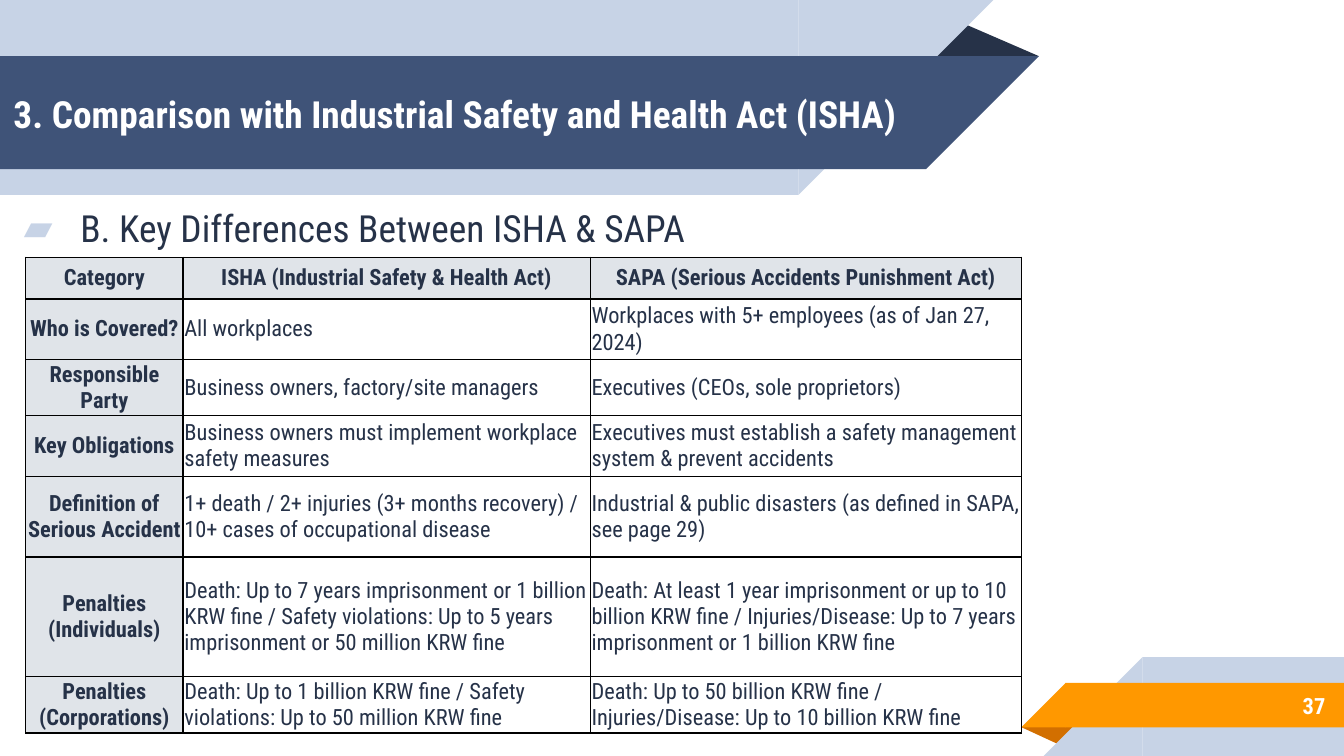
from dataclasses import dataclass

from lxml import etree
from pptx import Presentation
from pptx import util as u
from pptx.dml.color import RGBColor
from pptx.enum import shapes, text
from pptx.oxml.ns import qn

FONT = "Roboto Condensed"
INK, WHITE, PALE, NAVY = "263248", "FFFFFF", "C7D3E6", "3F5378"
ORANGE, RUST, HEADER_GREY, BLACK = "FF9800", "D26F00", "E0E4E9", "000000"

presentation = Presentation()
presentation.slide_width = u.Inches(10)
presentation.slide_height = presentation.slide_width * 9 // 16


@dataclass
class Box:
    """A frame in percent of the slide's width and height."""
    left: float
    top: float
    width: float
    height: float

    def frame(self) -> tuple[int, int, int, int]:
        across = presentation.slide_width / 100
        down = presentation.slide_height / 100
        return (round(self.left * across), round(self.top * down),
                round(self.width * across), round(self.height * down))


@dataclass
class Ribbon:
    """A band with a 45 degree end on its inner side."""
    body: Box
    colour: str
    hangs_from_left: bool


@dataclass
class Fold:
    box: Box
    colour: str
    rotation: int


@dataclass
class Row:
    height: float
    cells: tuple[str, str, str]


FOLDS = [Fold(Box(76, 96.2, 4.3, 2.4), RUST, 180),
         Fold(Box(68.8, 2.98, 8.5, 4.45), INK, 0)]
RIBBONS = [Ribbon(Box(85, 86.93, 15, 13.07), PALE, False),
           Ribbon(Box(79.3, 90.34, 20.7, 5.87), ORANGE, False),
           Ribbon(Box(0, 0, 59.4, 25.78), PALE, True),
           Ribbon(Box(0, 7.43, 68.9, 14.93), NAVY, True)]

TABLE_BOX = Box(1.92, 34.03, 74.1, 60.6)
COLUMN_WIDTHS = [1.17, 3.03, 3.21]
# The last row is as tall as its text.
ROWS = [
    Row(0.31, ("Category", "ISHA (Industrial Safety & Health Act)",
               "SAPA (Serious Accidents Punishment Act)")),
    Row(0.45, ("Who is Covered?", "All workplaces",
               "Workplaces with 5+ employees (as of Jan 27, 2024)")),
    Row(0.31, ("Responsible Party", "Business owners, factory/site managers",
               "Executives (CEOs, sole proprietors)")),
    Row(0.45, ("Key Obligations",
               "Business owners must implement workplace safety measures",
               "Executives must establish a safety management system & prevent accidents")),
    Row(0.6, ("Definition of Serious Accident",
              "1+ death / 2+ injuries (3+ months recovery) / 10+ cases of occupational disease",
              "Industrial & public disasters (as defined in SAPA, see page 29)")),
    Row(0.89, ("Penalties (Individuals)",
               "Death: Up to 7 years imprisonment or 1 billion KRW fine / "
               "Safety violations: Up to 5 years imprisonment or 50 million KRW fine",
               "Death: At least 1 year imprisonment or up to 10 billion KRW fine / "
               "Injuries/Disease: Up to 7 years imprisonment or 1 billion KRW fine")),
    Row(0, ("Penalties (Corporations)",
            "Death: Up to 1 billion KRW fine / Safety violations: Up to 50 million KRW fine",
            "Death: Up to 50 billion KRW fine / Injuries/Disease: Up to 10 billion KRW fine")),
]


def paint(fill, colour: str) -> None:
    fill.solid()
    fill.fore_color.rgb = RGBColor.from_string(colour)


def add_piece(slide, preset, frame: tuple[int, int, int, int], colour: str):
    shape = slide.shapes.add_shape(preset, *frame)
    shape.shadow.inherit = False
    paint(shape.fill, colour)
    shape.line.fill.background()
    return shape


def add_fold(slide, fold: Fold) -> None:
    shape = add_piece(slide, shapes.MSO_SHAPE.ISOSCELES_TRIANGLE,
                      fold.box.frame(), fold.colour)
    shape.adjustments[0] = 0.32
    shape.rotation = fold.rotation


def add_ribbon(slide, ribbon: Ribbon) -> None:
    left, top, width, height = ribbon.body.frame()
    add_piece(slide, shapes.MSO_SHAPE.RECTANGLE,
              (left, top, width, height), ribbon.colour)
    end_left = left + width if ribbon.hangs_from_left else left - height
    end = add_piece(slide, shapes.MSO_SHAPE.RIGHT_TRIANGLE,
                    (end_left, top, height, height), ribbon.colour)
    end._element.spPr.find(qn("a:xfrm")).set("flipH", "1")
    end.rotation = 180 if ribbon.hangs_from_left else 0


def write(text_frame, words: str, size: float, colour: str, bold: bool = False,
          align=text.PP_ALIGN.LEFT):
    text_frame.word_wrap = True
    text_frame.vertical_anchor = text.MSO_ANCHOR.MIDDLE
    text_frame.text = words
    paragraph = text_frame.paragraphs[0]
    paragraph.alignment = align
    font = paragraph.font
    font.name, font.size, font.bold = FONT, u.Pt(size), bold
    font.color.rgb = RGBColor.from_string(colour)
    return paragraph


def add_text(slide, box: Box, *style, **options):
    text_box = slide.shapes.add_textbox(*box.frame())
    frame = text_box.text_frame
    frame.margin_left = frame.margin_right = u.Inches(0.1)
    return write(frame, *style, **options)


def add_bullet(paragraph, mark: str, colour: str) -> None:
    properties = paragraph._p.get_or_add_pPr()
    properties.set("marL", str(u.Inches(0.5)))
    properties.set("indent", str(u.Inches(-0.42)))
    # Bullet marks come before the paragraph's default run properties.
    bullet_colour = etree.Element(qn("a:buClr"))
    etree.SubElement(bullet_colour, qn("a:srgbClr"), val=colour)
    bullet_font = etree.Element(qn("a:buFont"), typeface=FONT)
    bullet_mark = etree.Element(qn("a:buChar"), char=mark)
    for position, part in enumerate((bullet_colour, bullet_font, bullet_mark)):
        properties.insert(position, part)


def add_borders(cell, colour: str, points: float) -> None:
    properties = cell._tc.get_or_add_tcPr()
    for position, side in enumerate(("lnL", "lnR", "lnT", "lnB")):
        line = etree.Element(qn(f"a:{side}"), w=str(u.Pt(points)))
        fill = etree.SubElement(line, qn("a:solidFill"))
        etree.SubElement(fill, qn("a:srgbClr"), val=colour)
        properties.insert(position, line)


def add_comparison(slide, rows: list[Row]) -> None:
    table = slide.shapes.add_table(len(rows), len(COLUMN_WIDTHS), *TABLE_BOX.frame()).table
    table.first_row = table.horz_banding = False
    for column, width in zip(table.columns, COLUMN_WIDTHS):
        column.width = u.Inches(width)
    for row_index, row in enumerate(rows):
        table.rows[row_index].height = u.Inches(row.height)
        for column_index, words in enumerate(row.cells):
            cell = table.cell(row_index, column_index)
            heading = row_index == 0 or column_index == 0
            align = text.PP_ALIGN.CENTER if heading else text.PP_ALIGN.LEFT
            paragraph = write(cell.text_frame, words, 12, INK, heading, align)
            paragraph.space_after = u.Pt(8)
            cell.vertical_anchor = text.MSO_ANCHOR.MIDDLE
            cell.margin_left = cell.margin_right = u.Inches(0.01)
            cell.margin_top = cell.margin_bottom = u.Inches(0.01)
            if heading:
                paint(cell.fill, HEADER_GREY)
            else:
                cell.fill.background()
            add_borders(cell, BLACK, 0.75)


def main() -> None:
    slide = presentation.slides.add_slide(presentation.slide_layouts[5])
    for fold in FOLDS:
        add_fold(slide, fold)
    for ribbon in RIBBONS:
        add_ribbon(slide, ribbon)

    title = slide.shapes.title
    title.left, title.top, title.width, title.height = Box(0, 7.55, 72.8, 14.93).frame()
    write(title.text_frame, "3. Comparison with Industrial Safety and Health Act (ISHA)",
          20, WHITE, bold=True)
    slide.shapes._spTree.append(title._element)  # in front of the ribbons

    subtitle = add_text(slide, Box(0, 25.7, 100, 8.9),
                        "B. Key Differences Between ISHA & SAPA", 20, INK)
    add_bullet(subtitle, "▰", PALE)
    add_text(slide, Box(83.3, 90.2, 16.3, 6.2), "37", 12, WHITE, bold=True,
             align=text.PP_ALIGN.RIGHT)
    add_comparison(slide, ROWS)
    presentation.save("out.pptx")


if __name__ == "__main__":
    main()
